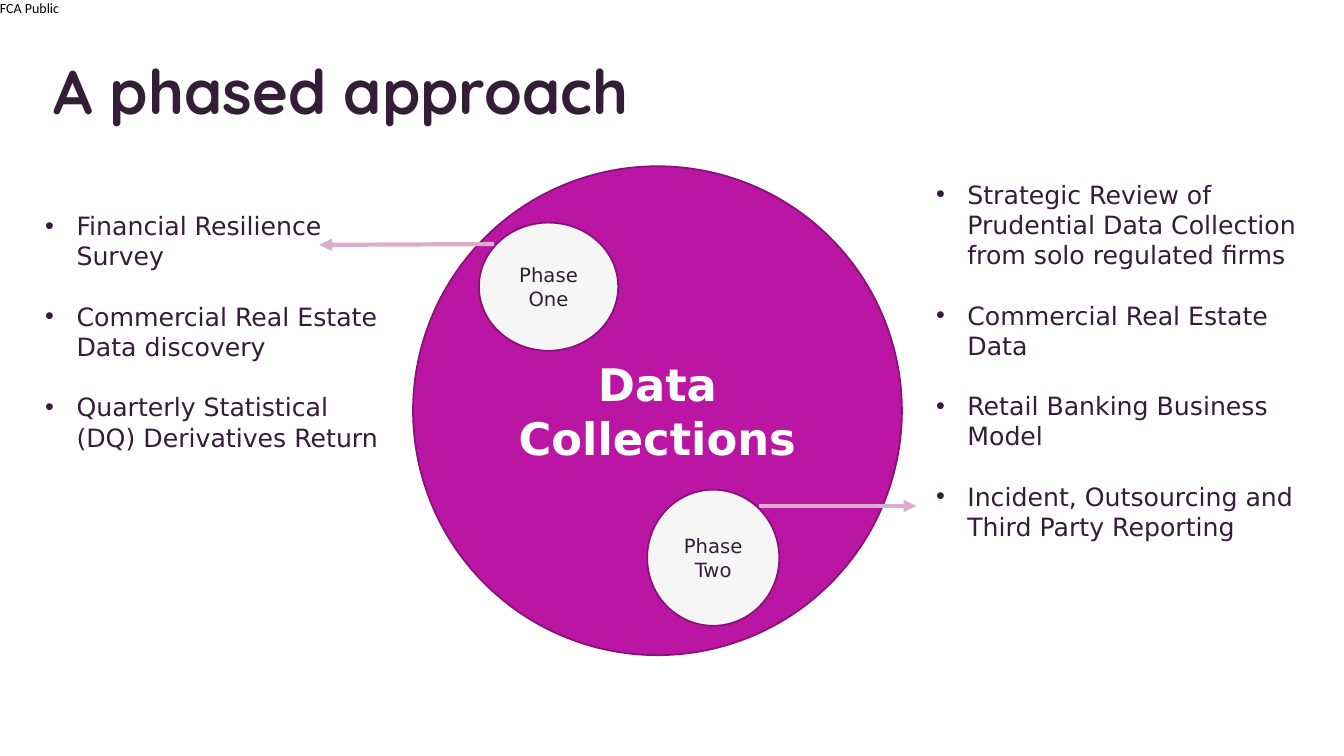
from lxml import etree
from pptx import Presentation
from pptx.dml.color import RGBColor
from pptx.enum import shapes, text
from pptx.oxml import ns
from pptx.util import Cm, Pt

COLORS = {
    "ink": "341D36",
    "black": "000000",
    "white": "FFFFFF",
    "magenta": "BB16A3",
    "outline": "8A1079",
    "pale": "F6F6F6",
    "arrow": "DAACCE",
}
BODY_FONT = "DejaVu Sans"

PHASE_ONE = [
    "Financial Resilience Survey",
    "Commercial Real Estate Data discovery",
    "Quarterly Statistical (DQ) Derivatives Return",
]
PHASE_TWO = [
    "Strategic Review of Prudential Data Collection from solo regulated firms",
    "Commercial Real Estate Data",
    "Retail Banking Business Model",
    "Incident, Outsourcing and Third Party Reporting",
]


def rgb(name):
    return RGBColor.from_string(COLORS[name])


def write(p, words, size=18, font=BODY_FONT, color="ink", bold=False,
          align=text.PP_ALIGN.LEFT):
    """Put one formatted run into a paragraph."""
    p.alignment = align
    r = p.add_run()
    r.text = words
    r.font.size = Pt(size)
    r.font.name = font
    r.font.bold = bold
    r.font.color.rgb = rgb(color)


def add_text_box(s, left, top, width, height):
    tf = s.shapes.add_textbox(Cm(left), Cm(top), Cm(width), Cm(height)).text_frame
    tf.word_wrap = True
    return tf


def add_title(s, words):
    sp = s.shapes.title
    sp.left, sp.top, sp.width, sp.height = Cm(1.09), Cm(0.79), Cm(29.67), Cm(2.95)
    tf = sp.text_frame
    tf.auto_size = text.MSO_AUTO_SIZE.NONE
    tf.vertical_anchor = text.MSO_ANCHOR.MIDDLE
    write(tf.paragraphs[0], words, size=44, font="Quicksand", bold=True)


def add_marking(s, words):
    tf = add_text_box(s, 0, 0, 1.57, 0.43)
    tf.word_wrap = False
    tf.margin_left = tf.margin_top = tf.margin_right = tf.margin_bottom = 0
    write(tf.paragraphs[0], words, size=10, font="Calibri", color="black")


def add_circle(s, left, top, width, height, words, fill="pale", **style):
    sp = s.shapes.add_shape(shapes.MSO_SHAPE.OVAL,
                            Cm(left), Cm(top), Cm(width), Cm(height))
    sp.shadow.inherit = False
    sp.fill.solid()
    sp.fill.fore_color.rgb = rgb(fill)
    sp.line.color.rgb = rgb("outline")
    sp.line.width = Pt(1.25)
    tf = sp.text_frame
    tf.word_wrap = True
    tf.vertical_anchor = text.MSO_ANCHOR.MIDDLE
    write(tf.paragraphs[0], words, align=text.PP_ALIGN.CENTER, **style)


def add_bullets(s, left, top, width, height, items):
    tf = add_text_box(s, left, top, width, height)
    for i, item in enumerate(items):
        p = tf.add_paragraph() if i else tf.paragraphs[0]
        pPr = p._p.get_or_add_pPr()
        pPr.set("marL", str(Cm(0.79)))
        pPr.set("indent", str(-Cm(0.79)))
        etree.SubElement(pPr, ns.qn("a:buFont")).set("typeface", "Arial")
        etree.SubElement(pPr, ns.qn("a:buChar")).set("char", "•")
        if i:
            p.space_before = Pt(21.5)
        write(p, item)


def add_arrow(s, x1, y1, x2, y2):
    c = s.shapes.add_connector(shapes.MSO_CONNECTOR.STRAIGHT,
                               Cm(x1), Cm(y1), Cm(x2), Cm(y2))
    c.line.color.rgb = rgb("arrow")
    c.line.width = Pt(3)
    etree.SubElement(c.line._get_or_add_ln(), ns.qn("a:tailEnd")).set("type", "triangle")
    etree.SubElement(c._element.spPr, ns.qn("a:effectLst"))


def main():
    prs = Presentation()
    prs.slide_width, prs.slide_height = Cm(33.87), Cm(19.05)
    s = prs.slides.add_slide(prs.slide_layouts[5])

    # Heading and classification
    add_marking(s, "FCA Public")
    add_title(s, "A phased approach")

    # Central circle
    add_circle(s, 10.41, 4.19, 12.32, 12.32, "Data Collections",
               fill="magenta", size=32, color="white", bold=True)

    # Phase one, to the left
    add_circle(s, 12.07, 5.61, 3.51, 3.23, "Phase One", size=14)
    add_bullets(s, 0.89, 5.18, 9.19, 6.4, PHASE_ONE)
    add_arrow(s, 12.45, 6.15, 8.05, 6.17)

    # Phase two, to the right
    add_arrow(s, 19.13, 12.75, 23.09, 12.75)
    add_circle(s, 16.31, 12.34, 3.33, 3.43, "Phase Two", size=14)
    add_bullets(s, 23.34, 4.39, 9.96, 9.5, PHASE_TWO)

    prs.save("out.pptx")


if __name__ == "__main__":
    main()
